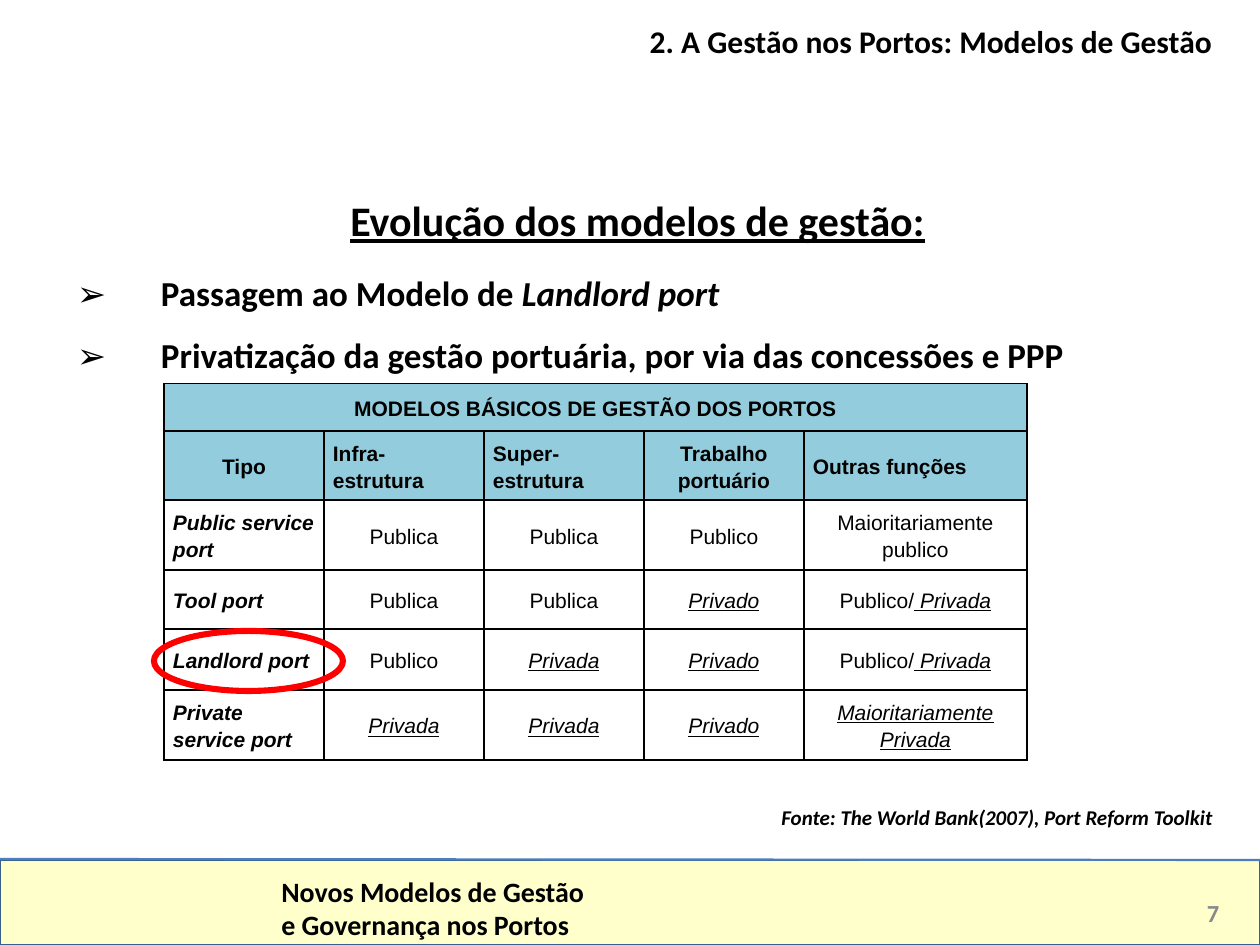
from lxml import etree
from pptx import Presentation
from pptx import util as u
from pptx.dml.color import RGBColor
from pptx.enum import shapes, text
from pptx.oxml import ns

SCALE = 914400 / 126
COLORS = {
    "black": "000000", "white": "FFFFFF", "header": "93CDDD", "footer": "FFFFCC",
    "footer line": "3A5F8C", "rule": "4B7EBC", "number": "898989", "highlight": "FF0000",
}
COLORS_RGB = {name: RGBColor.from_string(value) for name, value in COLORS.items()}
LEFT, CENTER, RIGHT = text.PP_ALIGN.LEFT, text.PP_ALIGN.CENTER, text.PP_ALIGN.RIGHT


def style(paragraph, size, align=LEFT, font="Calibri", color="black", bold=True, italic=False):
    paragraph.alignment = align
    paragraph.font.name = font
    paragraph.font.size = u.Pt(size)
    paragraph.font.bold = bold
    paragraph.font.italic = italic
    paragraph.font.color.rgb = COLORS_RGB[color]


def add_grid(left, top, widths, heights, border, margins, bottom_width=1):
    box = [int(n * SCALE) for n in (left, top, sum(widths), sum(heights))]
    table = slide.shapes.add_table(len(heights), len(widths), *box).table
    table.first_row = table.horz_banding = False
    for column, width in zip(table.columns, widths):
        column.width = int(width * SCALE)
    for row, height in zip(table.rows, heights):
        row.height = int(height * SCALE)
    for cell in table.iter_cells():
        cell.margin_left = cell.margin_right = int(margins[0] * SCALE)
        cell.margin_top, cell.margin_bottom = (int(n * SCALE) for n in margins[1:])
        properties = cell._tc.get_or_add_tcPr()
        for side in ("lnL", "lnR", "lnT", "lnB"):
            points = bottom_width if side == "lnB" else 1
            line = etree.SubElement(properties, ns.qn(f"a:{side}"), w=str(u.Pt(points)))
            fill = etree.SubElement(line, ns.qn("a:solidFill"))
            etree.SubElement(fill, ns.qn("a:srgbClr"), val=COLORS[border])
        cell.fill.background()
    return table


presentation = Presentation()
presentation.slide_width = int(1260 * SCALE)
presentation.slide_height = int(945 * SCALE)
slide = presentation.slides.add_slide(presentation.slide_layouts[5])

title = slide.shapes.title
title.left, title.top, title.width, title.height = (int(n * SCALE) for n in (323, 16, 902, 50))
title.text_frame.text = "2. A Gestão nos Portos: Modelos de Gestão"
title.text_frame.auto_size = text.MSO_AUTO_SIZE.NONE
title.text_frame.vertical_anchor = text.MSO_ANCHOR.TOP
style(title.text_frame.paragraphs[0], 18, RIGHT)

footer = slide.shapes.add_shape(
    shapes.MSO_SHAPE.RECTANGLE, *(int(n * SCALE) for n in (0, 860, 1260, 85)))
footer.shadow.inherit = False
footer.fill.solid()
footer.fill.fore_color.rgb = COLORS_RGB["footer"]
footer.line.color.rgb = COLORS_RGB["footer line"]
footer.line.width = u.Pt(1)

rule = slide.shapes.add_connector(
    shapes.MSO_CONNECTOR.STRAIGHT, *(int(n * SCALE) for n in (0, 859, 1260, 860)))
rule.line.color.rgb = COLORS_RGB["rule"]
rule.line.width = u.Pt(1.25)
etree.SubElement(rule._element.spPr, ns.qn("a:effectLst"))

for words, box, size, align, color, anchor in (
    ("Novos Modelos de Gestão e Governança nos Portos", (269, 868, 341, 83),
     16, LEFT, "black", text.MSO_ANCHOR.TOP),
    ("7", (1166, 888, 94, 50), 14, CENTER, "number", text.MSO_ANCHOR.MIDDLE),
):
    frame = slide.shapes.add_textbox(*(int(n * SCALE) for n in box)).text_frame
    frame.word_wrap = True
    frame.vertical_anchor = anchor
    frame.text = words
    style(frame.paragraphs[0], size, align, color=color)

source = add_grid(709, 800, [517], [40], "white", (13, 6, 6), 3).cell(0, 0)
source.text = "Fonte: The World Bank(2007), Port Reform Toolkit"
style(source.text_frame.paragraphs[0], 12, RIGHT, italic=True)

ROWS = [
    ["MODELOS BÁSICOS DE GESTÃO DOS PORTOS"],
    ["Tipo", "Infra-estrutura", "Super-estrutura", "Trabalho portuário", "Outras funções"],
    ["Public service port", "Publica", "Publica", "Publico", "Maioritariamente publico"],
    ["Tool port", "Publica", "Publica", "_Privado", "Publico/_ Privada"],
    ["Landlord port", "Publico", "_Privada", "_Privado", "Publico/_ Privada"],
    ["Private service port", "_Privada", "_Privada", "_Privado", "_Maioritariamente Privada"],
]
models = add_grid(164, 383, [160] * 4 + [223], [48, 69, 70, 59, 61, 70], "black", (9, 0, 0))
models.cell(0, 0).merge(models.cell(0, 4))
for row, values in enumerate(ROWS):
    for column, value in enumerate(values):
        cell = models.cell(row, column)
        cell.vertical_anchor = text.MSO_ANCHOR.MIDDLE
        header = row < 2
        if header:
            cell.fill.solid()
            cell.fill.fore_color.rgb = COLORS_RGB["header"]
        left_aligned = column in (1, 2, 4) if header else column == 0
        paragraph = cell.text_frame.paragraphs[0]
        style(paragraph, 12, LEFT if left_aligned else CENTER, "Arial",
              bold=header or column == 0, italic=not header and column == 0)
        paragraph.line_spacing = 1.15
        public, _, private = value.partition("_")
        if public:
            paragraph.add_run().text = public
        if private:
            run = paragraph.add_run()
            run.text = private
            run.font.italic = run.font.underline = True

highlight = slide.shapes.add_shape(
    shapes.MSO_SHAPE.OVAL, *(int(n * SCALE) for n in (154, 631, 189, 60)))
highlight.shadow.inherit = False
highlight.fill.background()
highlight.line.color.rgb = COLORS_RGB["highlight"]
highlight.line.width = u.Pt(3.5)

evolution = add_grid(64, 155, [1147], [226], "white", (13, 42, 0), 3).cell(0, 0).text_frame
heading = evolution.paragraphs[0]
heading.add_run().text = "Evolução dos modelos de gestão:"
style(heading, 24, CENTER)
heading.font.underline = True

for words, term, gap in (
    ("Passagem ao Modelo de ", "Landlord port", 14),
    ("Privatização da gestão portuária, por via das concessões e PPP", "", 11),
):
    paragraph = evolution.add_paragraph()
    properties = paragraph._p.get_or_add_pPr()
    properties.set("marL", str(int(84 * SCALE)))
    properties.set("indent", str(int(-84 * SCALE)))
    etree.SubElement(properties, ns.qn("a:buFont"), typeface="Arial")
    etree.SubElement(properties, ns.qn("a:buChar"), char="➢")
    style(paragraph, 20)
    paragraph.line_spacing = 1.0
    paragraph.space_before = u.Pt(gap)
    paragraph.add_run().text = words
    if term:
        run = paragraph.add_run()
        run.text = term
        run.font.italic = True

presentation.save("out.pptx")
